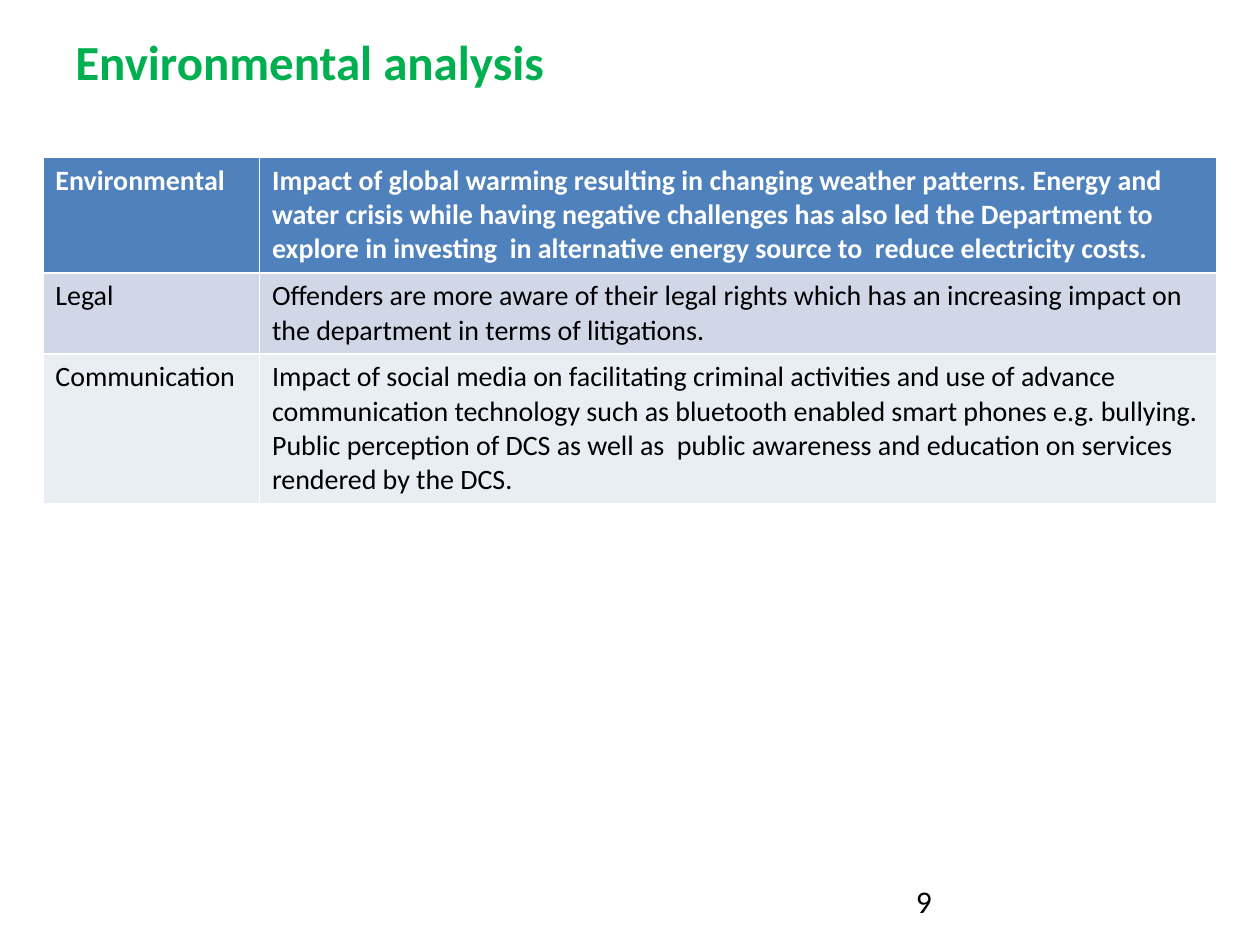
from pptx import Presentation
from pptx.dml.color import RGBColor
from pptx.util import Inches, Pt

COLORS = {
    "title": "00B050",
    "header": "4F81BD",
    "odd_row": "D0D8E8",
    "even_row": "E9EDF4",
    "white": "FFFFFF",
    "black": "000000",
}


def write(frame, lines, size, color, bold=False):
    """Fill a text frame with one paragraph per line."""
    frame.word_wrap = True
    font_values = {"name": "Calibri", "size": Pt(size), "bold": bold}
    for index, line in enumerate(lines):
        paragraph = frame.paragraphs[0] if index == 0 else frame.add_paragraph()
        run = paragraph.add_run()
        run.text = line
        for attribute, value in font_values.items():
            setattr(run.font, attribute, value)
        run.font.color.rgb = RGBColor.from_string(COLORS[color])


prs = Presentation()
prs.slide_width, prs.slide_height = Inches(10), Inches(7.5)
slide = prs.slides.add_slide(prs.slide_layouts[6])

# Factors: label, paragraphs, row height, fill, text colour, bold
factors = [
    ("Environmental",
     ["Impact of global warming resulting in changing weather patterns. Energy and "
      "water crisis while having negative challenges has also led the Department to "
      "explore in investing  in alternative energy source to  reduce electricity costs."],
     0.8, "header", "white", True),
    ("Legal",
     ["Offenders are more aware of their legal rights which has an increasing impact on "
      "the department in terms of litigations."],
     0.5, "odd_row", "black", False),
    ("Communication",
     ["Impact of social media on facilitating criminal activities and use of advance "
      "communication technology such as bluetooth enabled smart phones e.g. bullying.",
      "Public perception of DCS as well as  public awareness and education on services "
      "rendered by the DCS."],
     0.8, "even_row", "black", False),
]
# The default table style supplies the white cell borders
analysis = slide.shapes.add_table(
    len(factors), 2, Inches(0.34), Inches(1.25), Inches(9.32), Inches(2.1)).table
for column, width in zip(analysis.columns, (1.72, 7.6)):
    column.width = Inches(width)

for row, (label, impacts, height, fill, color, bold) in enumerate(factors):
    analysis.rows[row].height = Inches(height)
    for col, lines in enumerate(([label], impacts)):
        cell = analysis.cell(row, col)
        cell.fill.solid()
        cell.fill.fore_color.rgb = RGBColor.from_string(COLORS[fill])
        write(cell.text_frame, lines, 16, color, bold)

title = slide.shapes.add_textbox(Inches(0.5), Inches(0.2), Inches(9), Inches(0.57))
write(title.text_frame, ["Environmental analysis"], 28, "title", True)

page_number = slide.shapes.add_textbox(
    Inches(7.17), Inches(6.95), Inches(2.33), Inches(0.4))
write(page_number.text_frame, ["9"], 18, "black")

prs.save("out.pptx")
